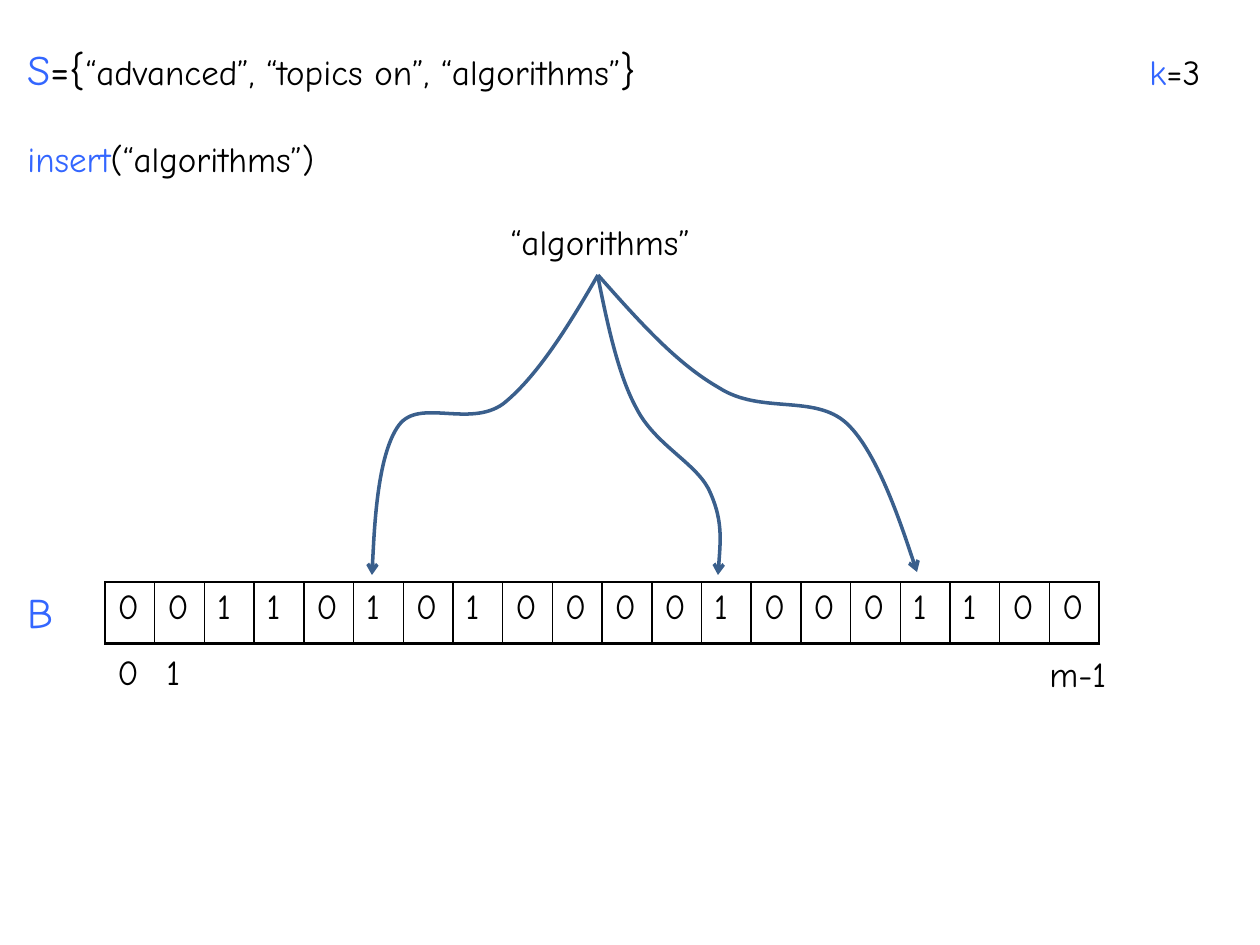
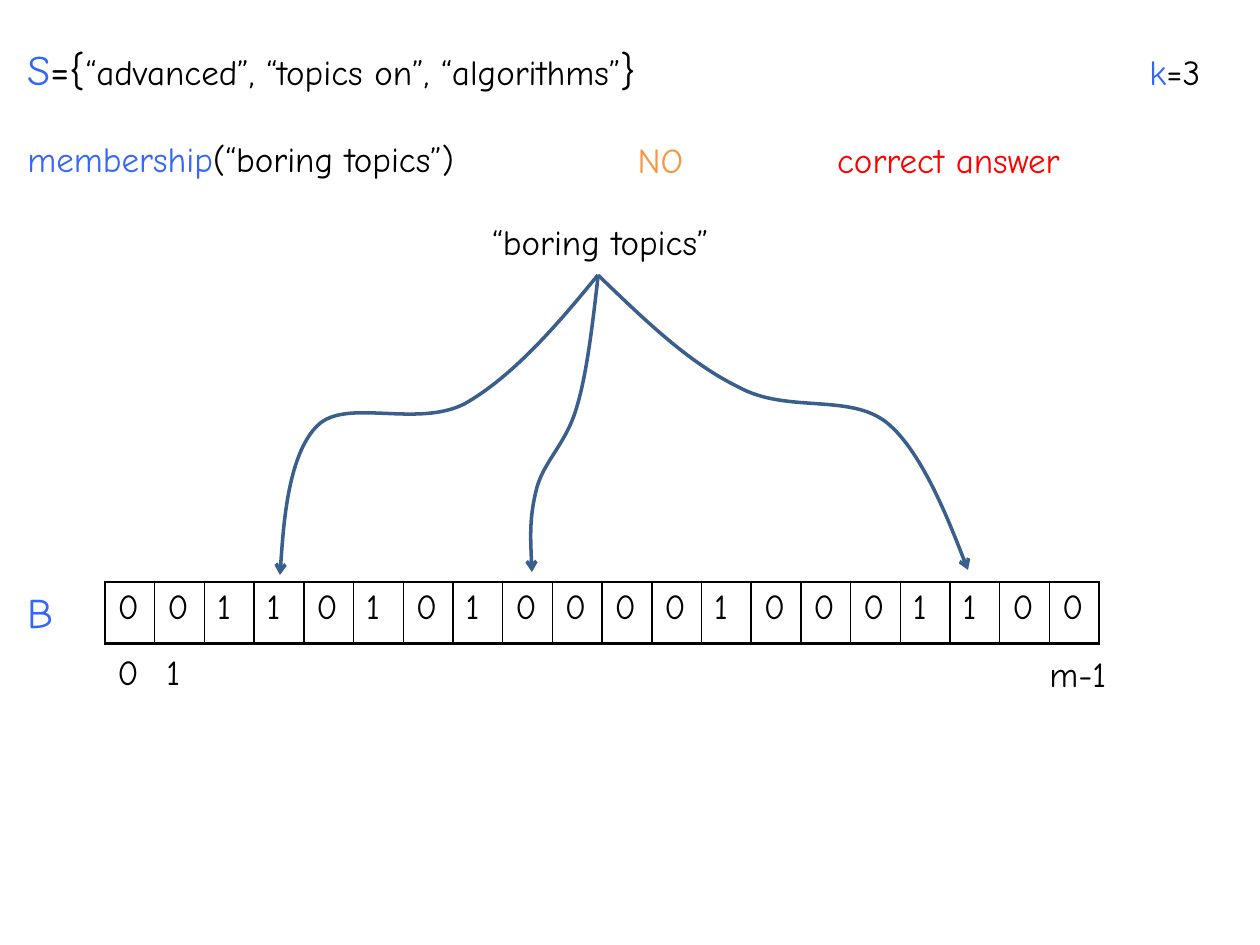
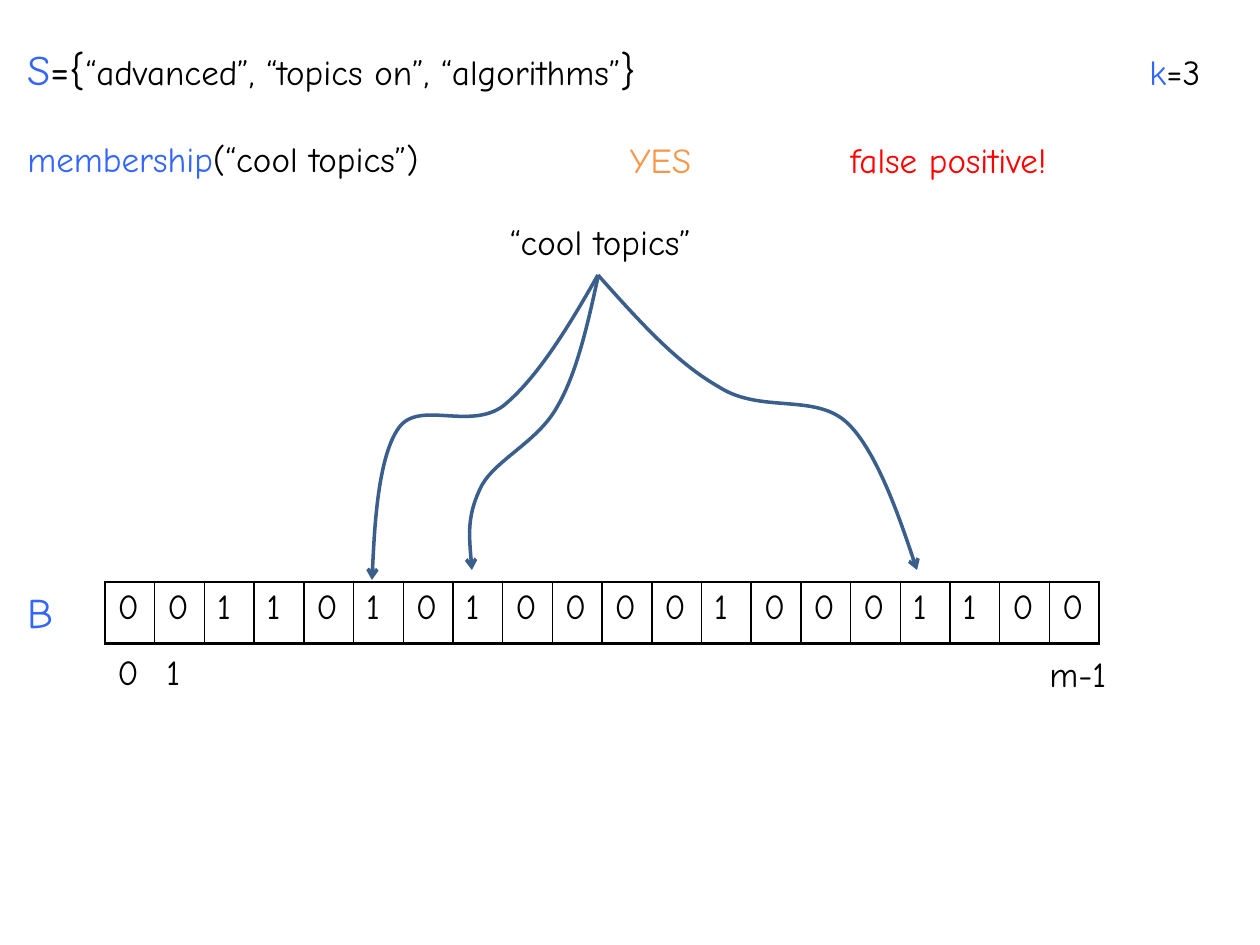
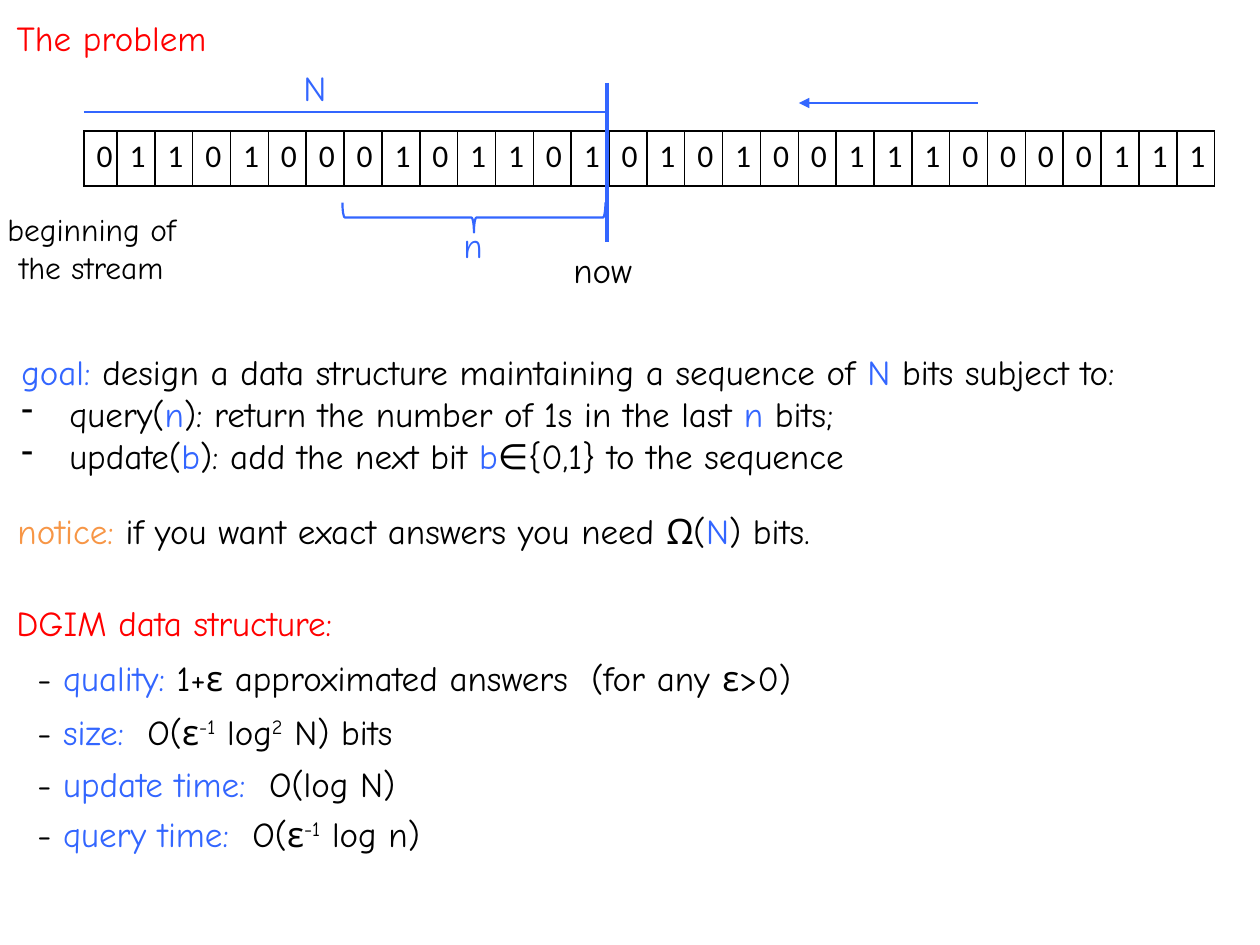
from lxml import etree
from pptx import Presentation
from pptx.dml.color import RGBColor
from pptx.enum.shapes import MSO_CONNECTOR, MSO_SHAPE
from pptx.enum.text import MSO_ANCHOR, MSO_AUTO_SIZE, PP_ALIGN
from pptx.oxml.ns import qn
from pptx.util import Pt

# Shared look
PX = 914400 / 126
FONT, DIGIT_FONT = "Comic Neue", "Calibri"
BLACK, BLUE, RED, ORANGE, ARROW = "000000", "3366FF", "FF0000", "F79646", "3A5F8C"
LEFT, CENTER = PP_ALIGN.LEFT, PP_ALIGN.CENTER
STRAIGHT, BRACE = MSO_CONNECTOR.STRAIGHT, MSO_SHAPE.LEFT_BRACE
GROW, TOP = MSO_AUTO_SIZE.SHAPE_TO_FIT_TEXT, MSO_ANCHOR.TOP
TITLE_ONLY, BLANK = 5, 6

# Bloom filter slides. A run is (text, colour, size, superscript); later parts may be left out.
FILTER_BITS = "00110101000010001100"
FILTER_TABLE = (105, 582, 995, 62)
FILTER_LABELS = [
    ((15, 580, 59, 63), [("B", BLUE, 24)]),
    ((105, 644, 59, 55), [("0",)]),
    ((154, 644, 59, 55), [("1",)]),
    ((1037, 646, 102, 55), [("m-1",)]),
    ((15, 37, 932, 63), [("S", BLUE, 24), ("={", BLACK, 24),
                         ("“advanced”, “topics on”, “algorithms”",), ("}", BLACK, 24)]),
    ((1137, 44, 106, 55), [("k", BLUE), ("=3",)]),
]
OPERATION_BOX = (15, 131, 585, 55)
KEY_BOX = (462, 214, 277, 55)
ANSWER_BOX = (522, 132, 277, 55)
VERDICT_BOX = (810, 132, 277, 55)
OPERATIONS = [
    {"name": "insert", "key": "algorithms", "answer": "", "verdict": "",
     "tips": [(372, 575), (917, 572), (718, 575)]},
    {"name": "membership", "key": "boring topics", "answer": "NO",
     "verdict": "correct answer",
     "tips": [(280, 575), (968, 570), (532, 572)]},
    {"name": "membership", "key": "cool topics", "answer": "YES",
     "verdict": "false positive!",
     "tips": [(372, 580), (917, 570), (472, 570)]},
]

# Hash arrows: start point, then Bézier points as fractions of the way to the tip
HASH_CURVES = [
    ((598, 275), [(.13, .17), (.27, .34), (.42, .43), (.57, .51), (.79, .41),
                  (.88, .5), (.98, .6), (1, 1), (1, 1)]),
    ((598, 275), [(.14, .17), (.25, .3), (.38, .38), (.51, .47), (.68, .4),
                  (.78, .5), (.88, .6), (1, 1), (1, 1)]),
    ((598, 277), [(.08, .16), (.17, .33), (.32, .44), (.47, .56), (.8, .62),
                  (.92, .71), (1.04, .81), (1.02, .9), (1, 1)]),
]

# Stream slide
STREAM_TITLE = "The problem"
TITLE_BOX = (4, 10, 1221, 55)
STREAM_BITS = "011010001011010101001110000111"
STREAM_TABLE = (84, 131, 1131, 55)
FIRST_BIT_WIDTH = 33
NOW_X = 607
STREAM_LINES = [  # start, end, width, arrowhead
    ((NOW_X, 83), (NOW_X, 242), 2, None),
    ((978, 103), (799, 103), 0.75, "triangle"),
    ((84, 112), (NOW_X, 112), 0.75, None),
]
WINDOW_BRACE = (459, 86, 30, 263)
STREAM_LABELS = [
    ((561, 242, 100, 55), [("now",)], LEFT),
    ((-25, 204, 233, 89), [("beginning of the stream", BLACK, 18)], CENTER),
    ((451, 217, 49, 55), [("n", BLUE)], LEFT),
    ((291, 60, 49, 55), [("N", BLUE)], LEFT),
    ((5, 503, 1254, 55), [("notice: ", ORANGE), ("if you want exact answers you need Ω(",),
                          ("N", BLUE), (") bits.",)], LEFT),
    ((4, 595, 1254, 55), [("DGIM data structure:", RED)], LEFT),
]
GOAL_BOX = (9, 344, 1246, 140)
GOAL = [("goal:", BLUE), (" design a data structure maintaining a sequence of ",),
        ("N", BLUE), (" bits subject to:",)]
GOAL_BULLETS = [
    [("query(",), ("n", BLUE), ("): return the number of 1s in the last ",),
     ("n", BLUE), (" bits;",)],
    [("update(",), ("b", BLUE), ("): add the next bit ",), ("b", BLUE),
     ("∈{0,1} to the sequence",)],
]
INVERSE = ("-1", BLACK, 20, True)
PROPERTIES = [  # top, name, value
    (650, "quality: ", [("1+ε approximated answers  (for any ε>0)",)]),
    (704, "size:  ", [("O(ε",), INVERSE, (" log",), ("2", BLACK, 20, True), (" N) bits",)]),
    (756, "update time:  ", [("O(log N)",)]),
    (806, "query time:  ", [("O(ε",), INVERSE, (" log n)",)]),
]


def emu(*lengths):
    return [round(length * PX) for length in lengths]


def color(value):
    return RGBColor.from_string(value)


def add_xml(parent, tag, **attributes):
    return etree.SubElement(parent, qn(tag), **attributes)


# Text
def fill_paragraph(paragraph, runs, align=LEFT):
    paragraph.alignment = align
    for text, *style in runs:
        tint, size, raised = style + [BLACK, 20, False][len(style):]
        run = paragraph.add_run()
        run.text = text
        run.font.name, run.font.size = FONT, Pt(size)
        run.font.color.rgb = color(tint)
        if raised:
            run._r.get_or_add_rPr().set("baseline", "30000")


def add_text(slide, box, runs, align=LEFT):
    frame = slide.shapes.add_textbox(*emu(*box)).text_frame
    frame.word_wrap, frame.auto_size = True, GROW
    fill_paragraph(frame.paragraphs[0], runs, align)
    return frame


def add_bullet(frame, runs):
    paragraph = frame.add_paragraph()
    fill_paragraph(paragraph, runs)
    properties = paragraph._p.get_or_add_pPr()
    indent = emu(48)[0]
    properties.set("marL", str(indent))
    properties.set("indent", str(-indent))
    add_xml(properties, "a:buChar", char="-")


# Bit tables
def set_borders(cell, bottom):
    properties = cell._tc.get_or_add_tcPr()
    for index, (side, width) in enumerate(zip("LRTB", (1, 1, 1, bottom))):
        border = etree.Element(qn(f"a:ln{side}"), w=str(Pt(width)))
        add_xml(add_xml(border, "a:solidFill"), "a:srgbClr", val=BLACK)
        properties.insert(index, border)


def add_bits(slide, box, bits, font, size, bottom, first_width=None):
    table = slide.shapes.add_table(1, len(bits), *emu(*box)).table
    table.first_row = table.horz_banding = False
    first = first_width or box[2] / len(bits)
    other = (box[2] - first) / (len(bits) - 1)
    for index, bit in enumerate(bits):
        table.columns[index].width = emu(other if index else first)[0]
        cell = table.cell(0, index)
        cell.fill.background()
        set_borders(cell, bottom)
        cell.text_frame.text = bit
        run_font = cell.text_frame.paragraphs[0].runs[0].font
        run_font.name, run_font.size = font, Pt(size)
        run_font.color.rgb = color(BLACK)


# Lines and curves
def set_line(shape, tint, width, arrowhead=None):
    shape.line.color.rgb = color(tint)
    shape.line.width = Pt(width)
    if arrowhead:
        add_xml(shape.line._get_or_add_ln(), "a:tailEnd", type=arrowhead)


def add_line(slide, start, end, width, arrowhead):
    line = slide.shapes.add_connector(STRAIGHT, *emu(*start, *end))
    set_line(line, BLUE, width, arrowhead)
    add_xml(line._element.spPr, "a:effectLst")


def add_hash_arrow(slide, start, fractions, tip):
    across, down = tip[0] - start[0], tip[1] - start[1]
    points = [emu(start[0] + x * across, start[1] + y * down) for x, y in fractions]
    builder = slide.shapes.build_freeform(*emu(*start))
    builder.add_line_segments(points, close=False)
    arrow = builder.convert_to_shape()
    arrow.shadow.inherit = False
    arrow.fill.background()
    set_line(arrow, ARROW, 2, "arrow")
    # Turn every three straight segments into one cubic curve
    outline = next(arrow._element.iter(qn("a:path")))
    segments = outline.findall(qn("a:lnTo"))
    for first in range(0, len(segments), 3):
        curve = add_xml(outline, "a:cubicBezTo")
        for segment in segments[first:first + 3]:
            curve.append(segment[0])
            outline.remove(segment)


# Slides
def build_filter_slide(presentation, operation):
    slide = presentation.slides.add_slide(presentation.slide_layouts[BLANK])
    add_bits(slide, FILTER_TABLE, FILTER_BITS, FONT, 20, bottom=2)
    for box, runs in FILTER_LABELS:
        add_text(slide, box, runs)
    key = f"“{operation['key']}”"
    add_text(slide, OPERATION_BOX, [(operation["name"], BLUE), (f"({key})",)])
    add_text(slide, KEY_BOX, [(key,)], CENTER)
    for (start, fractions), tip in zip(HASH_CURVES, operation["tips"]):
        add_hash_arrow(slide, start, fractions, tip)
    if operation["answer"]:
        add_text(slide, ANSWER_BOX, [(operation["answer"], ORANGE)], CENTER)
        add_text(slide, VERDICT_BOX, [(operation["verdict"], RED)], CENTER)


def build_stream_slide(presentation):
    slide = presentation.slides.add_slide(presentation.slide_layouts[TITLE_ONLY])
    title = slide.shapes.title
    title.left, title.top, title.width, title.height = emu(*TITLE_BOX)
    frame = title.text_frame
    frame.word_wrap, frame.auto_size, frame.vertical_anchor = True, GROW, TOP
    fill_paragraph(frame.paragraphs[0], [(STREAM_TITLE, RED)])

    add_bits(slide, STREAM_TABLE, STREAM_BITS, DIGIT_FONT, 18, 1, FIRST_BIT_WIDTH)
    for line in STREAM_LINES:
        add_line(slide, *line)
    brace = slide.shapes.add_shape(BRACE, *emu(*WINDOW_BRACE))
    brace.rotation = 270
    brace.shadow.inherit = False
    brace.fill.background()
    set_line(brace, BLUE, 1.25)

    for box, runs, align in STREAM_LABELS:
        add_text(slide, box, runs, align)
    goal = add_text(slide, GOAL_BOX, GOAL)
    for runs in GOAL_BULLETS:
        add_bullet(goal, runs)
    for top, name, value in PROPERTIES:
        add_text(slide, (25, top, 1111, 55), [("- ",), (name, BLUE), *value])


def main():
    presentation = Presentation()
    presentation.slide_width, presentation.slide_height = emu(1260, 945)
    for operation in OPERATIONS:
        build_filter_slide(presentation, operation)
    build_stream_slide(presentation)
    presentation.save("out.pptx")


if __name__ == "__main__":
    main()
